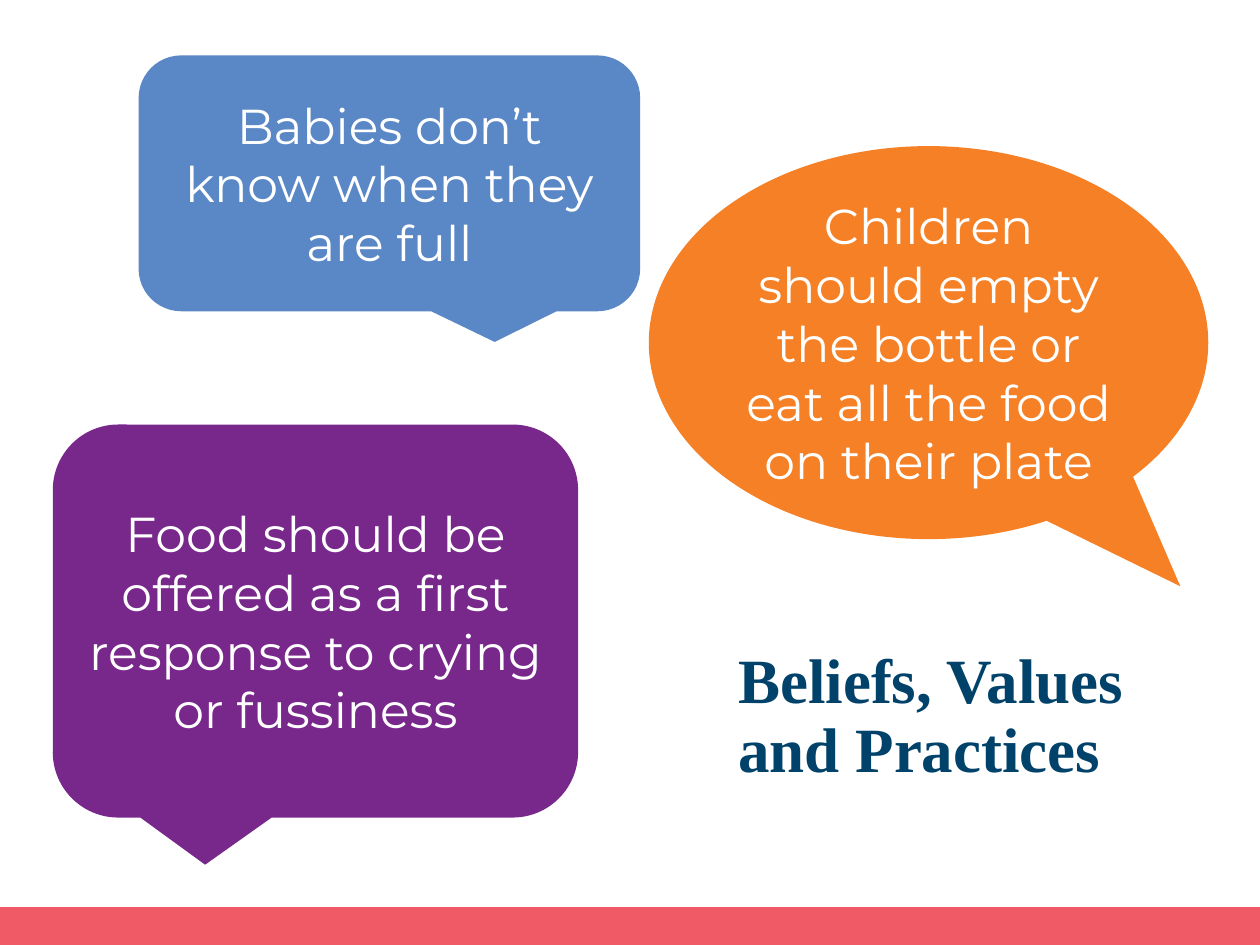
"""Build the slide on beliefs, values and practices about feeding children."""
from pptx import Presentation
from pptx.dml.color import RGBColor
from pptx.enum.shapes import MSO_SHAPE
from pptx.enum.text import MSO_ANCHOR, PP_ALIGN
from pptx.util import Pt

RECTANGLE = MSO_SHAPE.RECTANGLE
ROUNDED = MSO_SHAPE.ROUNDED_RECTANGULAR_CALLOUT
OVAL = MSO_SHAPE.OVAL_CALLOUT
MIDDLE, BOTTOM = MSO_ANCHOR.MIDDLE, MSO_ANCHOR.BOTTOM
CENTER, LEFT = PP_ALIGN.CENTER, PP_ALIGN.LEFT

WHITE = RGBColor(0xFF, 0xFF, 0xFF)
CORAL = RGBColor(0xF0, 0x5A, 0x66)
BLUE = RGBColor(0x5A, 0x87, 0xC5)
ORANGE = RGBColor(0xF5, 0x80, 0x25)
PURPLE = RGBColor(0x78, 0x27, 0x8B)
NAVY = RGBColor(0x00, 0x42, 0x6A)


def write(frame, text, font, size, color, bold=False, align=CENTER, anchor=MIDDLE, spacing=1.0):
    frame.word_wrap = True
    frame.vertical_anchor = anchor
    paragraph = frame.paragraphs[0]
    paragraph.alignment = align
    paragraph.line_spacing = spacing
    run = paragraph.add_run()
    run.text = text
    run.font.name = font
    run.font.size = Pt(size)
    run.font.bold = bold
    run.font.color.rgb = color


def add_filled(kind, box, color):
    shape = slide.shapes.add_shape(kind, *[Pt(length) for length in box])
    shape.shadow.inherit = False
    shape.fill.solid()
    shape.fill.fore_color.rgb = color
    shape.line.fill.background()
    return shape


deck = Presentation()
deck.slide_width, deck.slide_height = Pt(720), Pt(540)
slide = deck.slides.add_slide(deck.slide_layouts[5])

add_filled(RECTANGLE, (0, 518.4, 720, 21.6), CORAL)

beliefs = [
    ("Babies don’t know when they are full",
     ROUNDED, (79.2, 31.7, 286.6, 146.2), (0.21, 0.62), BLUE),
    ("Children should empty the bottle or eat all the food on their plate",
     OVAL, (370.8, 83.5, 319.7, 224.6), (0.45, 0.62), ORANGE),
    ("Food should be offered as a first response to crying or fussiness",
     ROUNDED, (30.2, 242.6, 300.2, 224.6), (-0.21, 0.62), PURPLE),
]
for belief, kind, box, tail, color in beliefs:
    bubble = add_filled(kind, box, color)
    bubble.adjustments[0], bubble.adjustments[1] = tail
    write(bubble.text_frame, belief, "Montserrat", 28, WHITE)

title = slide.shapes.title
title.left, title.top, title.width, title.height = Pt(414.7), Pt(242.6), Pt(275), Pt(284.4)
title.text_frame.margin_bottom = Pt(78)
write(title.text_frame, "Beliefs, Values and Practices", "Times New Roman", 36, NAVY,
      bold=True, align=LEFT, anchor=BOTTOM, spacing=0.9)

deck.save("out.pptx")
